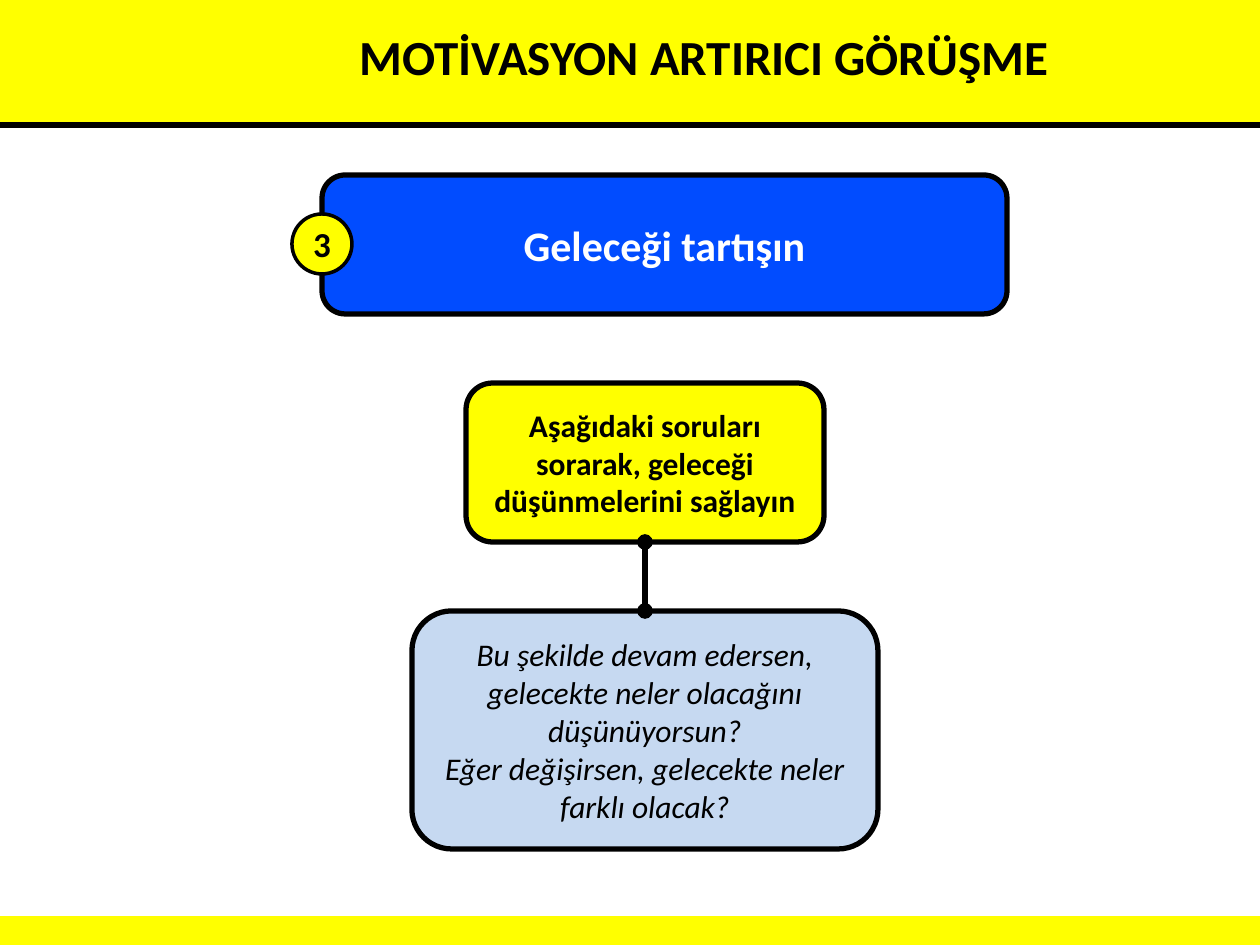
import pptx
import pptx.util
import pptx.dml.color
import pptx.enum.shapes
import pptx.enum.text
import pptx.oxml.xmlchemy

RGBColor = pptx.dml.color.RGBColor
SHAPES = pptx.enum.shapes.MSO_SHAPE
Pt = pptx.util.Pt
OxmlElement = pptx.oxml.xmlchemy.OxmlElement

YELLOW = RGBColor(0xFF, 0xFF, 0x00)
BLUE = RGBColor(0x01, 0x4C, 0xFF)
PALE_BLUE = RGBColor(0xC6, 0xD9, 0xF1)
BLACK = RGBColor(0, 0, 0)
WHITE = RGBColor(0xFF, 0xFF, 0xFF)
FONT = "Calibri"

WIDTH, HEIGHT = 1260, 945
EMU_PER_PX = 914400 / 126
TOP_BAND, BOTTOM_BAND = 125, 27

TITLE = "MOTİVASYON ARTIRICI GÖRÜŞME"
TITLE_BOX = (74, -23, 1260, 158)

# Boxes are left, top, width, height in px
QUESTIONS = dict(
    kind=SHAPES.ROUNDED_RECTANGLE, box=(412, 611, 466, 238), fill=PALE_BLUE, line_width=3,
    texts=["Bu şekilde devam edersen, gelecekte neler olacağını düşünüyorsun?",
           "Eğer değişirsen, gelecekte neler farklı olacak?"],
    style=dict(size=18, italic=True))
INSTRUCTION = dict(
    kind=SHAPES.ROUNDED_RECTANGLE, box=(466, 383, 358, 159), fill=YELLOW, line_width=3,
    texts=["Aşağıdaki soruları sorarak, geleceği düşünmelerini sağlayın"],
    style=dict(size=18, bold=True))
STEP = dict(
    kind=SHAPES.ROUNDED_RECTANGLE, box=(322, 175, 685, 139), fill=BLUE, line_width=3,
    texts=["Geleceği tartışın"], style=dict(size=24, bold=True, color=WHITE))
STEP_NUMBER = dict(
    kind=SHAPES.OVAL, box=(292, 214, 60, 60), fill=YELLOW, line_width=2,
    texts=["3"], style=dict(size=20, bold=True), margin=0)


def px(*lengths):
    """Turn px lengths into EMU."""
    return [pptx.util.Emu(round(length * EMU_PER_PX)) for length in lengths]


def write(frame, texts, size, bold=False, italic=False, color=BLACK):
    frame.word_wrap = True
    frame.vertical_anchor = pptx.enum.text.MSO_ANCHOR.MIDDLE
    for index, text in enumerate(texts):
        paragraph = frame.add_paragraph() if index else frame.paragraphs[0]
        paragraph.alignment = pptx.enum.text.PP_ALIGN.CENTER
        run = paragraph.add_run()
        run.text = text
        run.font.name = FONT
        run.font.size = Pt(size)
        run.font.bold = bold
        run.font.italic = italic
        run.font.color.rgb = color


def add_shape(slide, kind, box, fill, line_width, line_color=BLACK, texts=(), style=None, margin=None):
    shape = slide.shapes.add_shape(kind, *px(*box))
    shape.shadow.inherit = False
    shape.fill.solid()
    shape.fill.fore_color.rgb = fill
    shape.line.color.rgb = line_color
    shape.line.width = Pt(line_width)
    frame = shape.text_frame
    if margin is not None:
        frame.margin_left = frame.margin_right = frame.margin_top = frame.margin_bottom = margin
    if texts:
        write(frame, texts, **style)
    return shape


def add_line(slide, start, end):
    connector = slide.shapes.add_connector(
        pptx.enum.shapes.MSO_CONNECTOR.STRAIGHT, *px(*start, *end))
    connector.line.color.rgb = BLACK
    connector.line.width = Pt(3)
    connector._element.spPr.append(OxmlElement("a:effectLst"))
    return connector


def add_oval_ends(connector):
    line = connector.line._get_or_add_ln()
    for tag in ("a:headEnd", "a:tailEnd"):
        end = OxmlElement(tag)
        end.set("type", "oval")
        line.append(end)


def main():
    presentation = pptx.Presentation()
    presentation.slide_width, presentation.slide_height = px(WIDTH, HEIGHT)
    slide = presentation.slides.add_slide(presentation.slide_layouts[5])

    for top, height in ((0, TOP_BAND), (HEIGHT - BOTTOM_BAND, BOTTOM_BAND)):
        add_shape(slide, SHAPES.RECTANGLE, (0, top, WIDTH, height), YELLOW, 2, YELLOW)
    add_line(slide, (0, TOP_BAND), (WIDTH, TOP_BAND))

    title = slide.shapes.title
    title.left, title.top, title.width, title.height = px(*TITLE_BOX)
    write(title.text_frame, [TITLE], size=28, bold=True)
    slide.shapes._spTree.append(title._element)  # in front of the bands

    questions = add_shape(slide, **QUESTIONS)
    instruction = add_shape(slide, **INSTRUCTION)
    link = add_line(slide, (645, 542), (645, 611))
    link.begin_connect(instruction, 2)
    link.end_connect(questions, 0)
    add_oval_ends(link)
    add_shape(slide, **STEP)
    add_shape(slide, **STEP_NUMBER)

    presentation.save("out.pptx")


if __name__ == "__main__":
    main()
